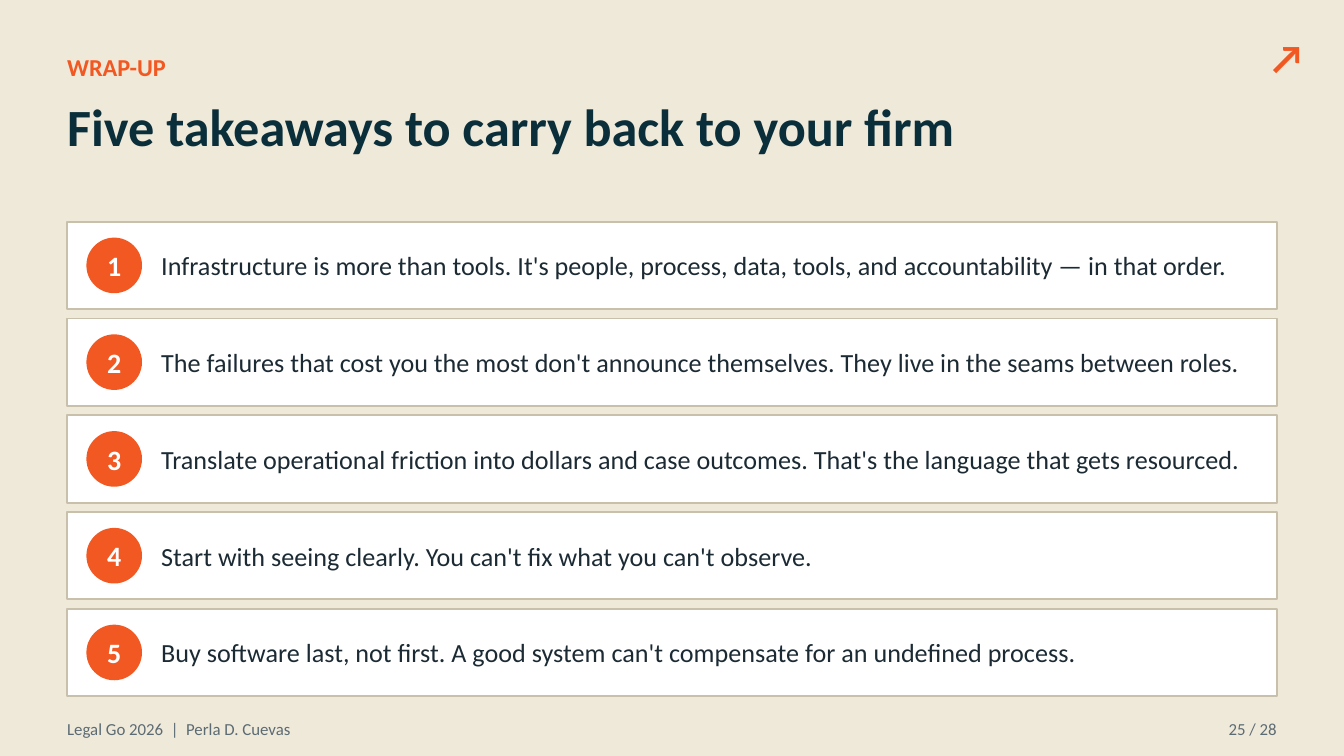
from dataclasses import dataclass

import pptx
import pptx.dml.color
import pptx.enum.shapes
import pptx.enum.text
import pptx.util

Pt = pptx.util.Pt
Align = pptx.enum.text.PP_ALIGN
Anchor = pptx.enum.text.MSO_ANCHOR
Shape = pptx.enum.shapes.MSO_SHAPE

FONT = "Calibri"
COLORS = {
    "background": "EFE9DA",
    "accent": "F25822",
    "title": "0A2F3A",
    "body": "1B2A33",
    "muted": "5C6B73",
    "card": "FFFFFF",
    "border": "C9C0AB",
}

MARGIN = 36
CARD_TOP, CARD_WIDTH, CARD_HEIGHT, CARD_PITCH = 118.8, 648, 46.8, 51.84
BADGE_LEFT, BADGE_SIZE = 46.8, 28.8
TAKEAWAY_LEFT, TAKEAWAY_WIDTH = 86.4, 590.4


@dataclass(frozen=True)
class Area:
    """Position and size in points."""
    left: float
    top: float
    width: float
    height: float

    def lengths(self) -> tuple:
        return Pt(self.left), Pt(self.top), Pt(self.width), Pt(self.height)


@dataclass(frozen=True)
class Style:
    size: float
    color: str
    bold: bool = False
    align: Align = Align.LEFT
    anchor: Anchor = Anchor.MIDDLE


@dataclass(frozen=True)
class Label:
    text: str
    area: Area
    style: Style


BADGE = Style(15, "card", bold=True, align=Align.CENTER)
TAKEAWAY = Style(14, "body")

LABELS = [
    Label("↗", Area(669.6, 10.8, 39.6, 39.6), Style(22, "accent", bold=True, align=Align.CENTER)),
    Label("WRAP-UP", Area(MARGIN, 25.2, 432, 21.6), Style(13, "accent", bold=True)),
    Label("Five takeaways to carry back to your firm", Area(MARGIN, 50.4, 648, 64.8),
          Style(28, "title", bold=True, anchor=Anchor.TOP)),
    Label("Legal Go 2026  |  Perla D. Cuevas", Area(MARGIN, 381.6, 432, 18), Style(9, "muted")),
    Label("25 / 28", Area(619.2, 381.6, 64.8, 18), Style(9, "muted", align=Align.RIGHT)),
]

TAKEAWAYS = [
    "Infrastructure is more than tools. It's people, process, data, tools, and accountability — in that order.",
    "The failures that cost you the most don't announce themselves. They live in the seams between roles.",
    "Translate operational friction into dollars and case outcomes. That's the language that gets resourced.",
    "Start with seeing clearly. You can't fix what you can't observe.",
    "Buy software last, not first. A good system can't compensate for an undefined process.",
]


def color(name: str) -> pptx.dml.color.RGBColor:
    return pptx.dml.color.RGBColor.from_string(COLORS[name])


def write_text(frame, text: str, style: Style, wrap: bool = True) -> None:
    frame.margin_left = frame.margin_top = frame.margin_right = frame.margin_bottom = 0
    frame.word_wrap = wrap
    frame.vertical_anchor = style.anchor
    para = frame.paragraphs[0]
    para.alignment = style.align
    span = para.add_run()
    span.text = text
    span.font.name = FONT
    span.font.size = Pt(style.size)
    span.font.bold = style.bold
    span.font.color.rgb = color(style.color)


def add_label(slide, label: Label) -> None:
    box = slide.shapes.add_textbox(*label.area.lengths())
    write_text(box.text_frame, label.text, label.style)


def add_outlined_shape(slide, kind: Shape, area: Area, fill: str, line: str):
    shape = slide.shapes.add_shape(kind, *area.lengths())
    shape.shadow.inherit = False
    shape.fill.solid()
    shape.fill.fore_color.rgb = color(fill)
    shape.line.color.rgb = color(line)
    shape.line.width = Pt(1)
    return shape


def add_takeaway(slide, number: int, text: str) -> None:
    """Draw one card with its numbered badge; numbers count down the page from 1."""
    top = CARD_TOP + (number - 1) * CARD_PITCH
    add_outlined_shape(slide, Shape.RECTANGLE, Area(MARGIN, top, CARD_WIDTH, CARD_HEIGHT),
                       "card", "border")
    badge_top = top + (CARD_HEIGHT - BADGE_SIZE) / 2
    badge = add_outlined_shape(slide, Shape.OVAL,
                               Area(BADGE_LEFT, badge_top, BADGE_SIZE, BADGE_SIZE),
                               "accent", "accent")
    write_text(badge.text_frame, str(number), BADGE, wrap=False)
    add_label(slide, Label(text, Area(TAKEAWAY_LEFT, top, TAKEAWAY_WIDTH, CARD_HEIGHT), TAKEAWAY))


def main() -> None:
    deck = pptx.Presentation()
    deck.slide_width, deck.slide_height = Pt(720), Pt(405)
    page = deck.slides.add_slide(deck.slide_layouts[6])
    page.background.fill.solid()
    page.background.fill.fore_color.rgb = color("background")
    for label in LABELS:
        add_label(page, label)
    for number, text in enumerate(TAKEAWAYS, start=1):
        add_takeaway(page, number, text)
    deck.save("out.pptx")


if __name__ == "__main__":
    main()
